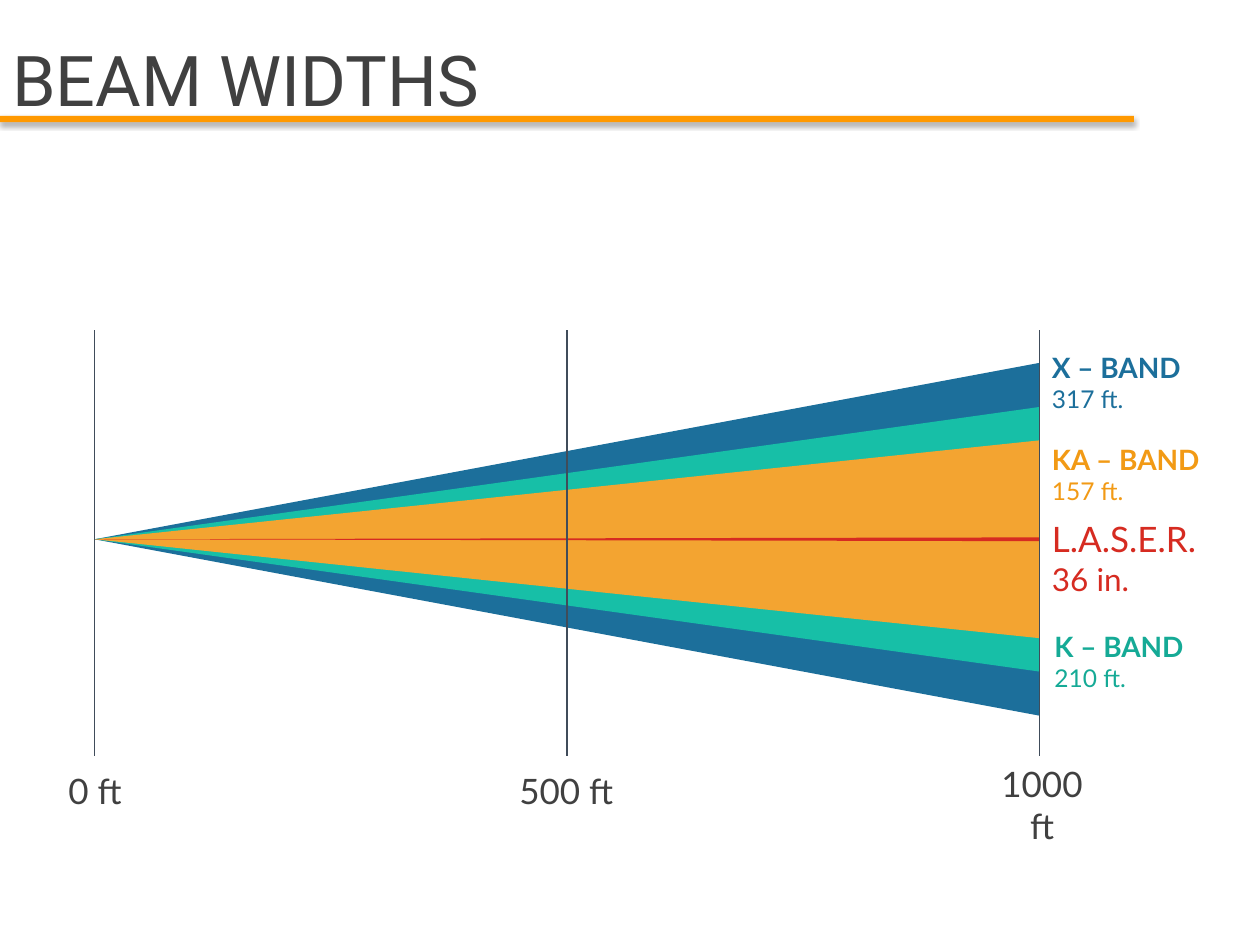
from typing import NamedTuple

from lxml import etree
from pptx import Presentation
from pptx.dml.color import RGBColor
from pptx.enum.shapes import MSO_CONNECTOR, MSO_SHAPE
from pptx.enum.text import MSO_ANCHOR, PP_ALIGN
from pptx.oxml import parse_xml
from pptx.oxml.ns import qn
from pptx.util import Inches, Pt

RECT, CONE = MSO_SHAPE.RECTANGLE, MSO_SHAPE.ISOSCELES_TRIANGLE
LINE = MSO_CONNECTOR.STRAIGHT
TOP, MIDDLE = MSO_ANCHOR.TOP, MSO_ANCHOR.MIDDLE
LEFT, CENTER = PP_ALIGN.LEFT, PP_ALIGN.CENTER

GOLD = RGBColor(0xFF, 0x99, 0x00)
BLUE = RGBColor(0x1C, 0x6F, 0x9B)
TEAL = RGBColor(0x17, 0xBF, 0xA7)
GREEN = RGBColor(0x15, 0xAA, 0x96)
AMBER = RGBColor(0xF3, 0xA4, 0x31)
ORANGE = RGBColor(0xF2, 0x9A, 0x15)
RED = RGBColor(0xD6, 0x2B, 0x21)
GRAY = RGBColor(0x40, 0x40, 0x40)
SLATE = RGBColor(0x40, 0x4C, 0x5A)

START, REACH, AXIS = 0.75, 7.5, 4.28
SHADOW = (
    '<a:effectLst xmlns:a="http://schemas.openxmlformats.org/drawingml/2006/main">'
    '<a:outerShdw blurRad="39370" dist="22860" dir="5400000" rotWithShape="0">'
    '<a:srgbClr val="000000"><a:alpha val="35000"/></a:srgbClr>'
    "</a:outerShdw></a:effectLst>"
)


class Box(NamedTuple):
    left: float
    top: float
    width: float
    height: float


class Row(NamedTuple):
    text: str
    size: int
    bold: bool = False


class Beam(NamedTuple):
    width: float
    color: RGBColor


class Label(NamedTuple):
    box: Box
    color: RGBColor
    rows: list[Row]


class Mark(NamedTuple):
    feet: int
    box: Box


BEAMS = [Beam(2.8, BLUE), Beam(2.1, TEAL), Beam(1.57, AMBER), Beam(0.03, RED)]
LABELS = [
    Label(Box(8.25, 2.73, 1.75, 0.61), BLUE, [Row("X – BAND", 16, True), Row("317 ft.", 14)]),
    Label(Box(8.27, 4.95, 1.73, 0.61), GREEN, [Row("K – BAND", 16, True), Row("210 ft.", 14)]),
    Label(Box(8.25, 3.46, 1.75, 0.61), ORANGE, [Row("KA – BAND", 16, True), Row("157 ft.", 14)]),
    Label(Box(8.25, 4.06, 1.75, 0.74), RED, [Row("L.A.S.E.R.", 20), Row("36 in.", 18)]),
]
MARKS = [
    Mark(0, Box(0.42, 6.06, 0.67, 0.43)),
    Mark(500, Box(3.83, 6.06, 1.33, 0.44)),
    Mark(1000, Box(7.73, 6, 1.08, 0.44)),
]


def add_block(slide, kind, box: Box, color: RGBColor):
    """Add a plain filled shape without outline or shadow."""
    block = slide.shapes.add_shape(kind, *map(Inches, box))
    block.shadow.inherit = False
    block.fill.solid()
    block.fill.fore_color.rgb = color
    block.line.fill.background()
    return block


def add_beam(slide, beam: Beam) -> None:
    """Add a cone that opens rightward from the start point."""
    left = START + (REACH - beam.width) / 2
    box = Box(left, AXIS - REACH / 2, beam.width, REACH)
    add_block(slide, CONE, box, beam.color).rotation = 270


def add_text(slide, box: Box, rows: list[Row], color: RGBColor,
             font: str = "Lato", align=LEFT, anchor=TOP) -> None:
    """Add a wrapped text box with one paragraph per row."""
    frame = slide.shapes.add_textbox(*map(Inches, box)).text_frame
    frame.word_wrap = True
    frame.vertical_anchor = anchor
    frame.text = "\n".join(row.text for row in rows)
    for para, row in zip(frame.paragraphs, rows):
        para.alignment = align
        para.font.name = font
        para.font.size = Pt(row.size)
        para.font.bold = row.bold
        para.font.color.rgb = color


def add_mark(slide, mark: Mark) -> None:
    """Add a distance line and its caption."""
    left = Inches(START + REACH * mark.feet / 1000)
    line = slide.shapes.add_connector(LINE, left, Inches(2.62), left, Inches(6))
    line.line.color.rgb = SLATE
    line.line.width = Pt(0.75)
    etree.SubElement(line._element.spPr, qn("a:effectLst"))
    add_text(slide, mark.box, [Row(f"{mark.feet} ft", 20)], GRAY, align=CENTER)


def main() -> None:
    """Build the beam width slide."""
    deck = Presentation()
    deck.slide_width, deck.slide_height = Inches(10), Inches(7.5)
    slide = deck.slides.add_slide(deck.slide_layouts[6])

    rule = add_block(slide, RECT, Box(0, 0.92, 9, 0.05), GOLD)
    props = rule._element.spPr
    props.replace(props.find(qn("a:effectLst")), parse_xml(SHADOW))

    for beam in BEAMS:
        add_beam(slide, beam)
    add_text(slide, Box(0, 0.33, 9, 0.58), [Row("BEAM WIDTHS", 40)], GRAY,
             font="Roboto", anchor=MIDDLE)
    for label in LABELS:
        add_text(slide, label.box, label.rows, label.color)
    for mark in MARKS:
        add_mark(slide, mark)

    deck.save("out.pptx")


if __name__ == "__main__":
    main()
